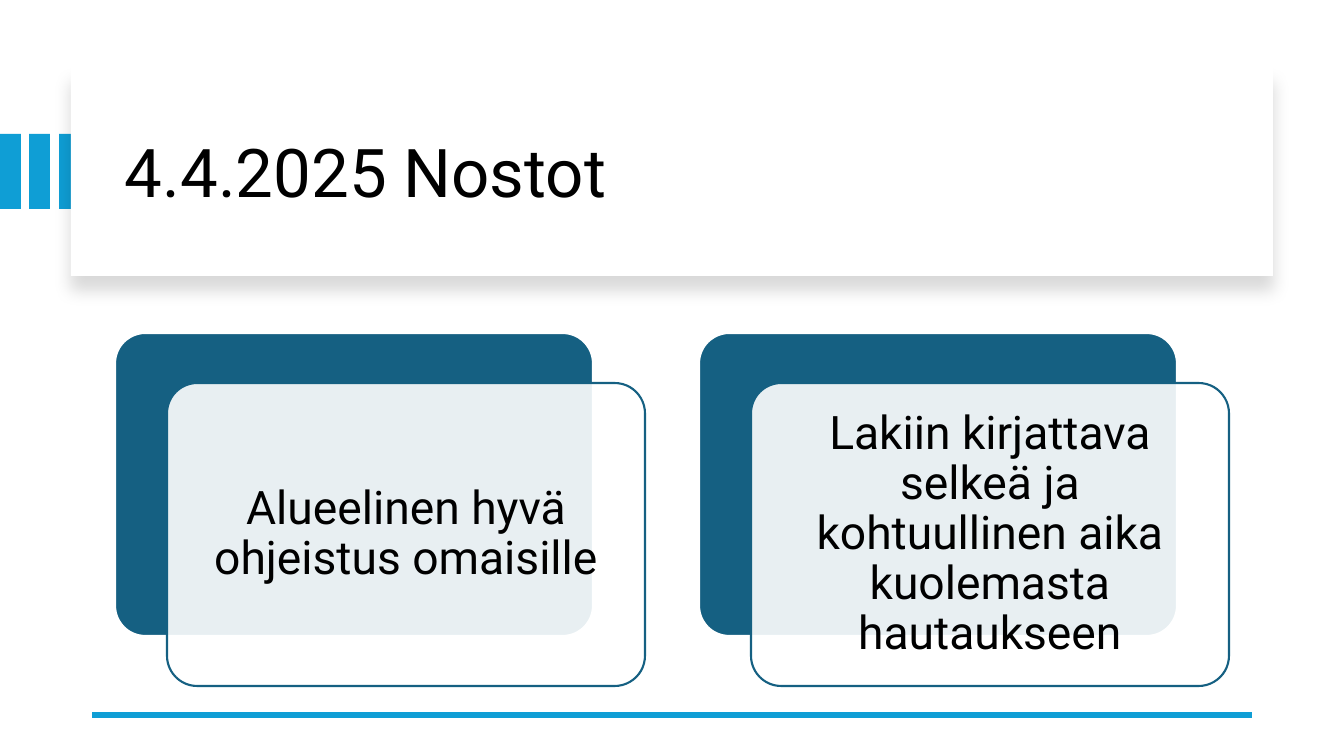
from lxml.etree import SubElement
from pptx import Presentation
from pptx.dml.color import RGBColor
from pptx.enum.shapes import MSO_CONNECTOR, MSO_SHAPE
from pptx.enum.text import MSO_ANCHOR, PP_ALIGN
from pptx.oxml.ns import qn
from pptx.util import Emu, Pt

SLIDE_WIDTH, SLIDE_HEIGHT = 1344, 756
EMU_PER_PX = 914400 / 100.8
FONT = "Roboto"
BLACK = RGBColor(0x00, 0x00, 0x00)
WHITE = RGBColor(0xFF, 0xFF, 0xFF)
SKY = RGBColor(0x0F, 0x9E, 0xD5)
TEAL = RGBColor(0x15, 0x60, 0x82)

HIGHLIGHTS = [
    "Alueelinen hyvä ohjeistus omaisille",
    "Lakiin kirjattava selkeä ja kohtuullinen aika kuolemasta hautaukseen",
]


def px(length):
    return Emu(round(length * EMU_PER_PX))


def apply_format(target, values):
    for name, value in values.items():
        setattr(target, name, value)


def add_block(shapes, preset, box, fill, outline=None):
    block = shapes.add_shape(preset, *map(px, box))
    block.shadow.inherit = False
    block.fill.solid()
    block.fill.fore_color.rgb = fill
    if outline is None:
        block.line.fill.background()
    else:
        block.line.color.rgb = outline
        block.line.width = Pt(1.5)
    return block


def add_words(shapes, box, words, size, align, inset=None):
    holder = shapes.add_textbox(*map(px, box))
    frame = holder.text_frame
    apply_format(frame, {"word_wrap": True, "vertical_anchor": MSO_ANCHOR.MIDDLE})
    if inset is not None:
        sides = ("left", "top", "right", "bottom")
        apply_format(frame, {f"margin_{side}": px(inset) for side in sides})
    paragraph = frame.paragraphs[0]
    apply_format(paragraph, {"alignment": align, "line_spacing": 0.9})
    run = paragraph.add_run()
    run.text = words
    apply_format(run.font, {"name": FONT, "size": Pt(size)})
    run.font.color.rgb = BLACK


def add_soft_shadow(panel):
    effects = panel.element.spPr.find(qn("a:effectLst"))
    shadow = SubElement(
        effects, qn("a:outerShdw"), blurRad=str(Pt(11)), dist=str(Pt(10)),
        dir="5400000", algn="t", rotWithShape="0",
    )
    tint = SubElement(shadow, qn("a:srgbClr"), val=str(BLACK))
    SubElement(tint, qn("a:alpha"), val="15000")


def add_stripes(slide, box):
    left, top, width, height = box
    stripes = slide.shapes.add_group_shape()
    for index in range(3):
        stripe_left = left + index * 59 // 2
        add_block(stripes.shapes, MSO_SHAPE.RECTANGLE, (stripe_left, top, width, height), SKY)


def add_header(slide, box, title):
    left, top, width, height = box
    add_stripes(slide, (left - 71, top + 67, 21, 75))
    panel = add_block(slide.shapes, MSO_SHAPE.RECTANGLE, box, WHITE)
    add_soft_shadow(panel)
    title_box = (left + 44, top + 23, width - 81, height - 38)
    add_words(slide.shapes, title_box, title, 48, PP_ALIGN.LEFT)


def add_footer_rule(slide, box):
    left, top, width, height = box
    rule = slide.shapes.add_connector(
        MSO_CONNECTOR.STRAIGHT, px(left + width), px(top), px(left), px(top + height)
    )
    rule.line.color.rgb = SKY
    rule.line.width = Pt(4.5)
    SubElement(rule.element.spPr, qn("a:effectLst"))


def add_highlight(slide, box, words):
    left, top, width, height = box
    front_box = (left + 52, top + 50, width, height)
    words_box = (left + 61, top + 59, width - 18, height - 18)
    card = slide.shapes.add_group_shape()
    back = add_block(card.shapes, MSO_SHAPE.ROUNDED_RECTANGLE, box, TEAL, WHITE)
    front = add_block(card.shapes, MSO_SHAPE.ROUNDED_RECTANGLE, front_box, WHITE, TEAL)
    for layer in (back, front):
        layer.adjustments[0] = 0.1
    fill_color = front.element.spPr.find(qn("a:solidFill"))[0]
    SubElement(fill_color, qn("a:alpha"), val="90000")
    add_words(card.shapes, words_box, words, 33, PP_ALIGN.CENTER, inset=14)


def main():
    deck = Presentation()
    apply_format(deck, {"slide_width": px(SLIDE_WIDTH), "slide_height": px(SLIDE_HEIGHT)})
    slide = deck.slides.add_slide(deck.slide_layouts[6])
    add_header(slide, (71, 67, 1202, 209), "4.4.2025 Nostot")
    add_footer_rule(slide, (92, 715, 1160, 0))
    for index, words in enumerate(HIGHLIGHTS):
        add_highlight(slide, (115 + index * 584, 333, 478, 303), words)
    deck.save("out.pptx")


if __name__ == "__main__":
    main()
